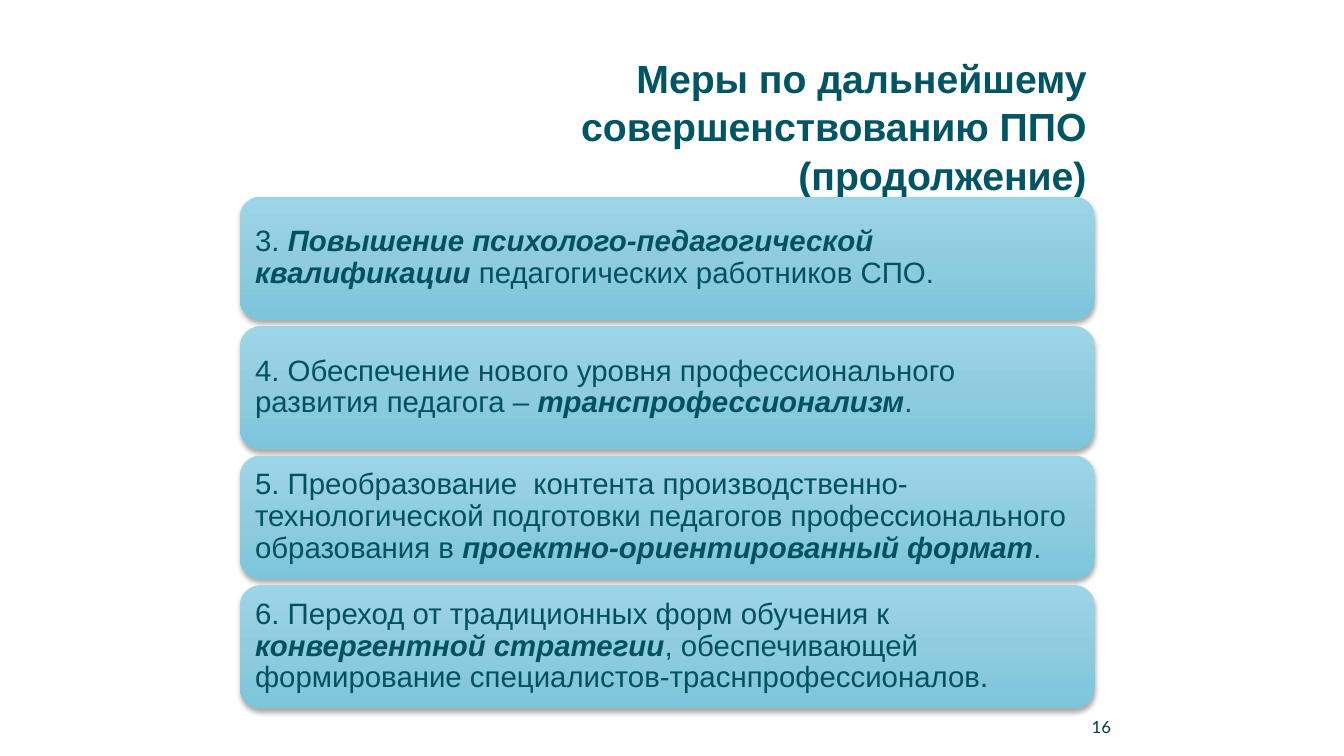
"""Build the slide on further measures for developing vocational teacher training."""
from pptx import Presentation
from pptx.dml.color import RGBColor
from pptx.enum.shapes import MSO_SHAPE
from pptx.enum.text import MSO_ANCHOR, MSO_AUTO_SIZE, PP_ALIGN
from pptx.oxml import parse_xml
from pptx.util import Pt

ROUNDED = MSO_SHAPE.ROUNDED_RECTANGLE
TOP, MIDDLE = MSO_ANCHOR.TOP, MSO_ANCHOR.MIDDLE
LEFT, RIGHT = PP_ALIGN.LEFT, PP_ALIGN.RIGHT
NO_FIT = MSO_AUTO_SIZE.NONE

HEADING = "Меры по дальнейшему совершенствованию ППО (продолжение)"
PAGE_NUMBER = "16"
MEASURES = [
    ("3. ", "Повышение психолого-педагогической квалификации ",
     "педагогических работников СПО."),
    ("4. Обеспечение нового уровня профессионального развития педагога – ",
     "транспрофессионализм", "."),
    ("5. Преобразование  контента производственно-технологической подготовки "
     "педагогов профессионального образования в ",
     "проектно-ориентированный формат", "."),
    ("6. Переход от традиционных форм обучения к ", "конвергентной стратегии",
     ", обеспечивающей формирование специалистов-траснпрофессионалов."),
]

HEADING_FONT = {"name": "Arial", "size": Pt(28), "bold": True}
MEASURE_FONT = {"name": "Arial", "size": Pt(21), "bold": False, "italic": False}
KEY_FONT = {**MEASURE_FONT, "bold": True, "italic": True}
PAGE_FONT = {"name": "Lato", "size": Pt(12)}

HEADING_BOX = (256.3, 33.5, 527, 95)
PAGE_BOX = (751, 504, 49.7, 31)
CARD_LEFT, CARD_TOP, CARD_WIDTH, CARD_HEIGHT = 171.4, 140.4, 610.6, 87.9
CARD_STEP = 92.5
CARD_INSET = 6.5
CARD_STOPS = [(0, "9DD5E8"), (50, "90CCDF"), (100, "7CC5DB")]
DRAWING_NS = 'xmlns:a="http://schemas.openxmlformats.org/drawingml/2006/main"'


def color(hex_value):
    """Turn a hex string into a colour."""
    return RGBColor.from_string(hex_value)


def apply(target, values):
    """Set every attribute in a dict of format values."""
    for key, value in values.items():
        setattr(target, key, value)


def add_run(paragraph, text, font, hex_value):
    """Append one formatted run."""
    run = paragraph.add_run()
    run.text = text
    apply(run.font, font)
    run.font.color.rgb = color(hex_value)


def paint_card(card):
    """Give a card its gradient and soft shadow."""
    stops = "".join(f'<a:gs pos="{pos * 1000}"><a:srgbClr val="{tone}"/></a:gs>'
                    for pos, tone in CARD_STOPS)
    properties = card._element.spPr
    properties.append(parse_xml(
        f'<a:gradFill {DRAWING_NS} rotWithShape="1"><a:gsLst>{stops}</a:gsLst>'
        '<a:lin ang="5400000" scaled="0"/></a:gradFill>'))
    card.line.fill.background()
    properties.append(parse_xml(
        f'<a:effectLst {DRAWING_NS}><a:outerShdw blurRad="{Pt(3.5)}" '
        f'dist="{Pt(2.2)}" dir="5400000" rotWithShape="0"><a:srgbClr val="000000">'
        '<a:alpha val="32000"/></a:srgbClr></a:outerShdw></a:effectLst>'))


def add_measure(slide, index, parts):
    """Add the card of one measure, with its key phrase emphasised."""
    top = CARD_TOP + index * CARD_STEP
    card = slide.shapes.add_shape(
        ROUNDED, Pt(CARD_LEFT), Pt(top), Pt(CARD_WIDTH), Pt(CARD_HEIGHT))
    paint_card(card)
    frame = card.text_frame
    apply(frame, {"word_wrap": True, "vertical_anchor": MIDDLE})
    apply(frame, {f"margin_{side}": Pt(CARD_INSET)
                  for side in ("left", "top", "right", "bottom")})
    measure = frame.paragraphs[0]
    apply(measure, {"alignment": LEFT, "line_spacing": 0.9})
    for text, font in zip(parts, (MEASURE_FONT, KEY_FONT, MEASURE_FONT)):
        add_run(measure, text, font, "005260")


def main():
    """Compose and save the slide."""
    deck = Presentation()
    apply(deck, {"slide_width": Pt(960), "slide_height": Pt(540)})
    slide = deck.slides.add_slide(deck.slide_layouts[5])

    heading = slide.shapes.title
    apply(heading, dict(zip(("left", "top", "width", "height"), map(Pt, HEADING_BOX))))
    apply(heading.text_frame, {"word_wrap": True, "vertical_anchor": TOP,
                               "auto_size": NO_FIT})
    heading_line = heading.text_frame.paragraphs[0]
    apply(heading_line, {"alignment": RIGHT, "line_spacing": 1.04})
    add_run(heading_line, HEADING, HEADING_FONT, "005564")

    for index, parts in enumerate(MEASURES):
        add_measure(slide, index, parts)

    page = slide.shapes.add_textbox(*map(Pt, PAGE_BOX)).text_frame
    apply(page, {"word_wrap": True, "vertical_anchor": MIDDLE})
    page.paragraphs[0].alignment = RIGHT
    add_run(page.paragraphs[0], PAGE_NUMBER, PAGE_FONT, "023F47")
    deck.save("out.pptx")


if __name__ == "__main__":
    main()
